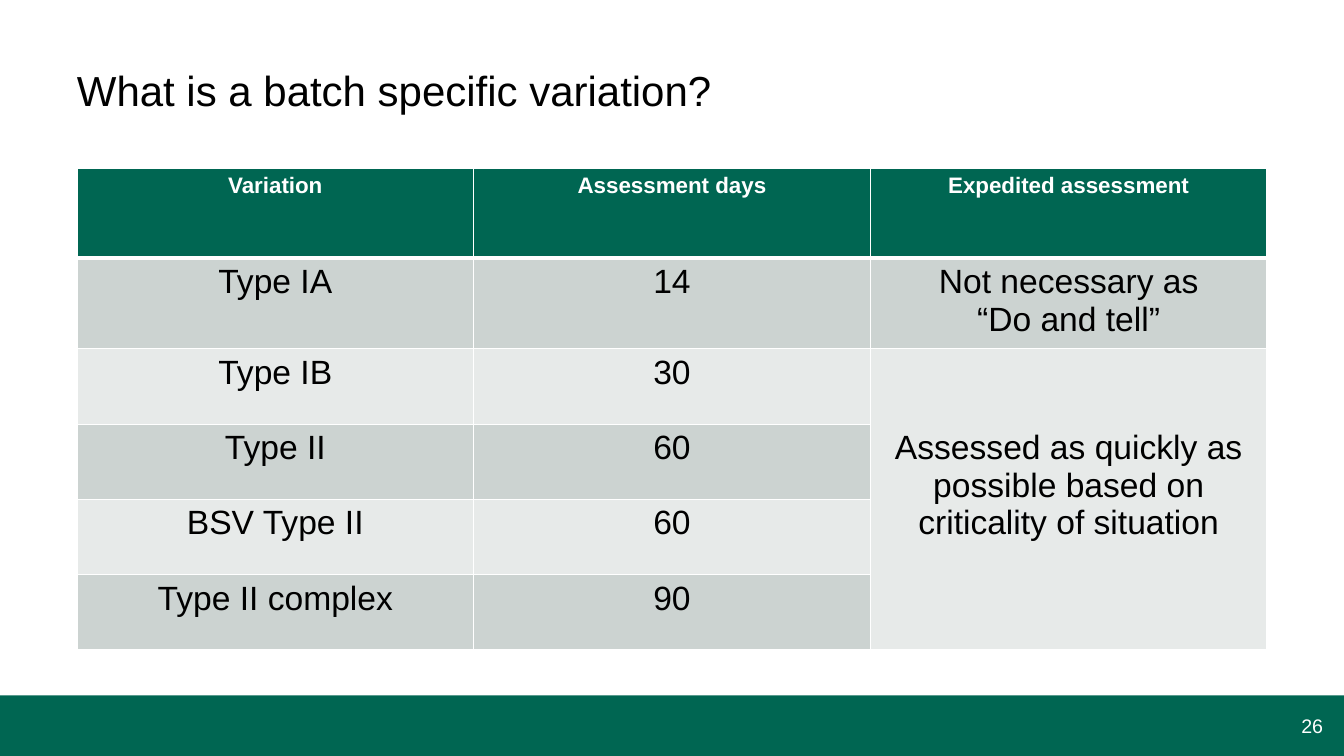
from lxml.etree import SubElement
from pptx import Presentation
from pptx.dml.color import RGBColor
from pptx.enum.shapes import MSO_SHAPE as Shape
from pptx.enum.text import MSO_ANCHOR as Anchor, PP_ALIGN as Align
from pptx.oxml.ns import qn
from pptx.util import Pt

GREEN, WHITE, BLACK = "006652", "FFFFFF", "000000"
DARK_BAND, LIGHT_BAND = "CCD3D1", "E7EAE9"


def color(hex_string):
    return RGBColor.from_string(hex_string)


def write(frame, text, size=24, font_color=BLACK, bold=False, align=Align.LEFT,
          anchor=Anchor.TOP, margins=(0, 0, 0, 0)):
    frame.word_wrap = True
    frame.vertical_anchor = anchor
    frame.margin_left, frame.margin_top, frame.margin_right, frame.margin_bottom = map(Pt, margins)
    frame.text = text
    for paragraph in frame.paragraphs:
        paragraph.alignment = align
        font = paragraph.font
        for run in paragraph.runs:
            font = run.font
            font.name = "Arial"
            font.size = Pt(size)
            font.bold = bold
            font.color.rgb = color(font_color)


presentation = Presentation()
presentation.slide_width, presentation.slide_height = Pt(960), Pt(540)
slide = presentation.slides.add_slide(presentation.slide_layouts[6])

footer = slide.shapes.add_shape(Shape.RECTANGLE, Pt(0), Pt(496.8), Pt(960), Pt(43.2))
footer.shadow.inherit = False
footer.fill.solid()
footer.fill.fore_color.rgb = color(GREEN)
footer.line.fill.background()

page_number = slide.shapes.add_textbox(Pt(910.8), Pt(496.8), Pt(49.2), Pt(43.2))
write(page_number.text_frame, "26", size=14, font_color=WHITE,
      anchor=Anchor.MIDDLE, margins=(18.72, 0, 0, 0))

title = slide.shapes.add_textbox(Pt(55), Pt(43.2), Pt(850), Pt(57))
write(title.text_frame, "What is a batch specific variation?", size=30, margins=(0, 3, 0, 0))

rows = [
    ("Variation", "Assessment days", "Expedited assessment"),
    ("Type IA", "14", "Not necessary as\n“Do and tell”"),
    ("Type IB", "30", "Assessed as quickly as possible based on criticality of situation"),
    ("Type II", "60", ""),
    ("BSV Type II", "60", ""),
    ("Type II complex", "90", ""),
]
row_heights = [64, 64] + [53.8] * 4
table = slide.shapes.add_table(len(rows), 3, Pt(55), Pt(120.4), Pt(850), Pt(sum(row_heights))).table
for column in table.columns:
    column.width = Pt(850 / 3)
table.cell(2, 2).merge(table.cell(5, 2))

for row_index, texts in enumerate(rows):
    table.rows[row_index].height = Pt(row_heights[row_index])
    is_header = row_index == 0
    band = GREEN if is_header else DARK_BAND if row_index % 2 else LIGHT_BAND
    for column_index, text in enumerate(texts):
        cell = table.cell(row_index, column_index)
        properties = cell._tc.get_or_add_tcPr()
        for side in ("lnL", "lnR", "lnT", "lnB"):
            thick = (row_index, side) in ((0, "lnB"), (1, "lnT"))
            border = SubElement(properties, qn("a:" + side), w=str(Pt(3 if thick else 1)))
            SubElement(SubElement(border, qn("a:solidFill")), qn("a:srgbClr"), val=WHITE)
        cell.fill.solid()
        cell.fill.fore_color.rgb = color(band)
        if cell.is_spanned:
            continue
        top_margin = 57.6 if cell.is_merge_origin else 3.6
        write(cell.text_frame, text, size=16 if is_header else 24,
              font_color=WHITE if is_header else BLACK, bold=is_header, align=Align.CENTER)
        cell.margin_left = cell.margin_right = Pt(7.2)
        cell.margin_top, cell.margin_bottom = Pt(top_margin), Pt(3.6)

presentation.save("out.pptx")
